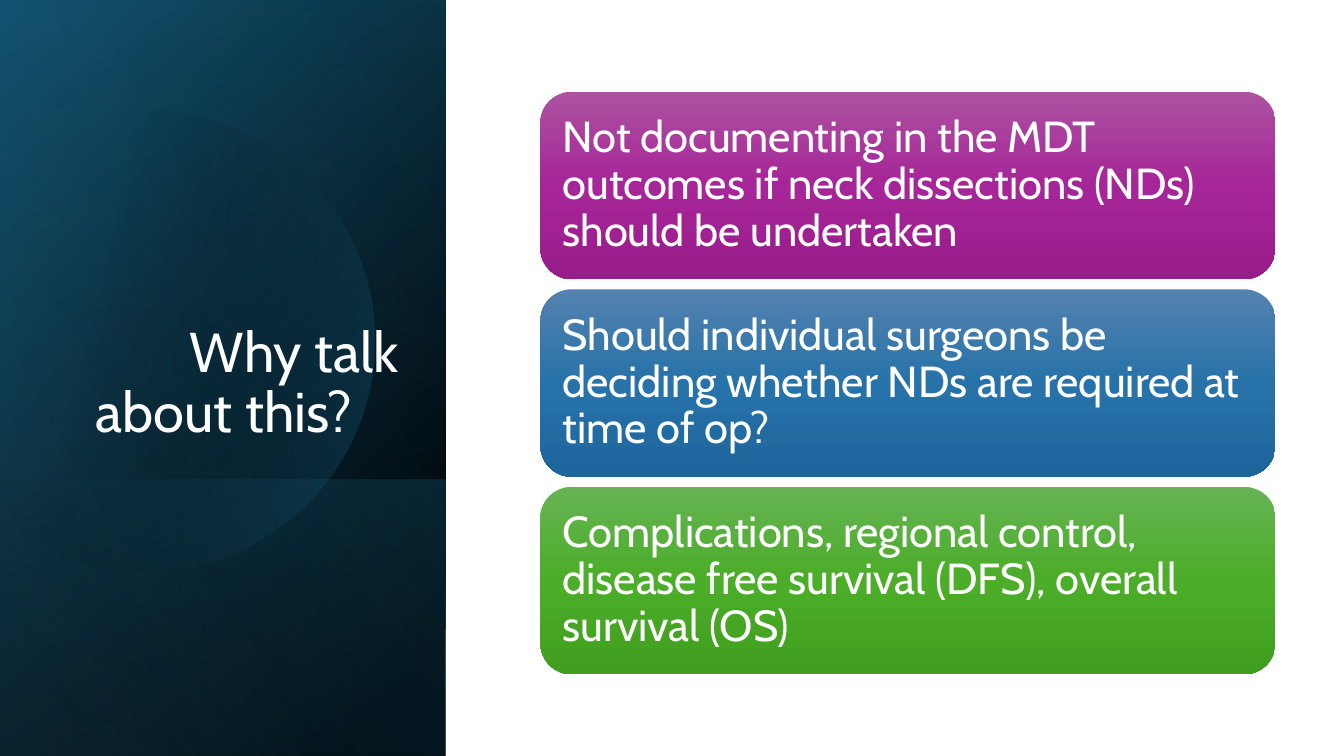
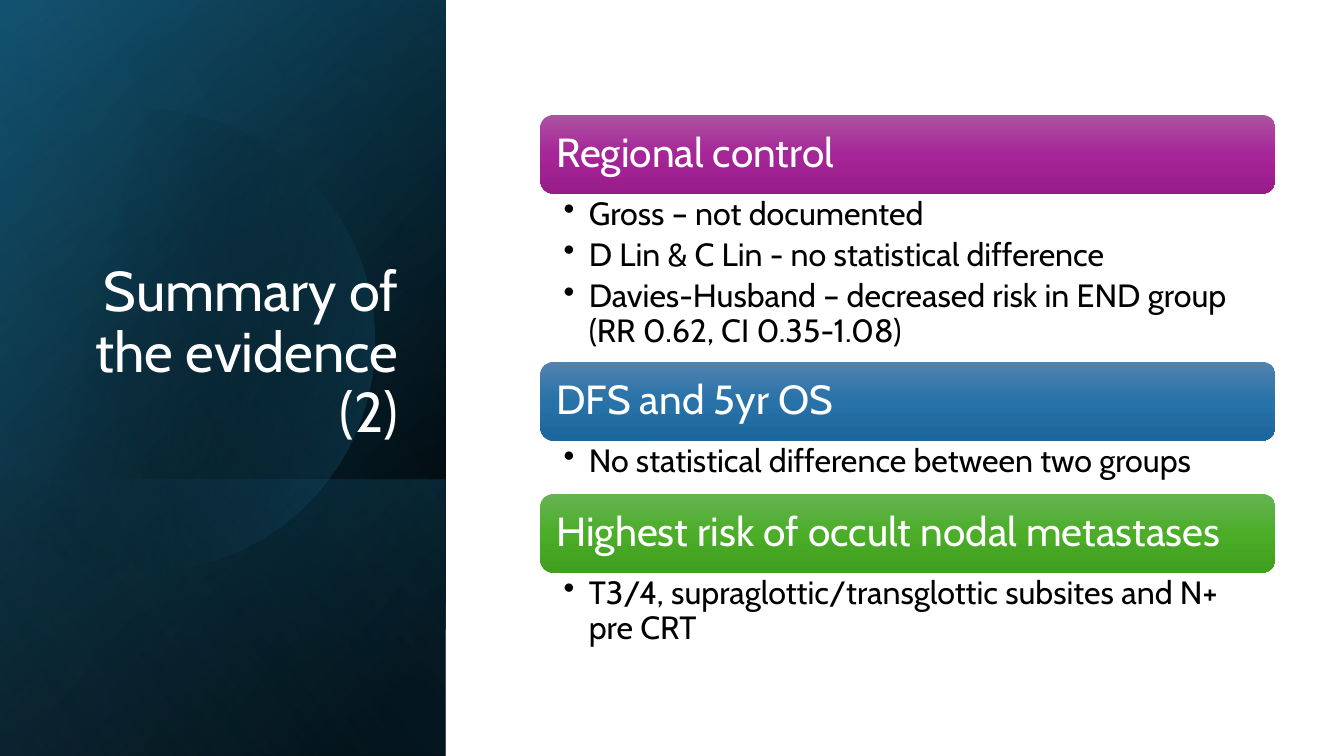
import math
from dataclasses import dataclass

from lxml import etree
from pptx import Presentation
from pptx.dml.color import RGBColor
from pptx.enum import shapes, text
from pptx.oxml import ns
from pptx.util import Inches, Pt


@dataclass(frozen=True)
class Theme:
    font: str = "Cabin"
    light: str = "FFFFFF"
    dark: str = "000000"
    navy: str = "104862"
    teal: str = "156082"
    sky: str = "46B1E1"
    title_size: int = 40
    card_size: int = 31
    header_size: int = 29
    bullet_size: int = 23
    line_spacing: float = 0.9
    accents: tuple = (
        ("AC53A0", "A62598", "991C8B"),
        ("5382AF", "2772A9", "1D669C"),
        ("66B354", "4BAD28", "409F1E"),
    )


THEME = Theme()
SLIDE_W, SLIDE_H = 13.33, 7.5
PANEL_W = 4.42
CONTENT_LEFT, CONTENT_W = 5.36, 7.29
TITLE_TOP, TITLE_RIGHT, TITLE_H = 1.84, 4.05, 2.62


def gradient_fill(shape, stops, angle):
    """Fill with (position %, colour, opacity %) stops; the angle runs clockwise."""
    shape.shadow.inherit = False
    shape.line.fill.background()
    shape.fill.gradient()
    grad = shape._element.spPr.find(ns.qn("a:gradFill"))
    for child in list(grad):
        grad.remove(child)
    grad.set("rotWithShape", "1")
    stop_list = etree.SubElement(grad, ns.qn("a:gsLst"))
    for position, colour, opacity in stops:
        stop = etree.SubElement(stop_list, ns.qn("a:gs"), pos=str(position * 1000))
        rgb = etree.SubElement(stop, ns.qn("a:srgbClr"), val=colour)
        if opacity < 100:
            etree.SubElement(rgb, ns.qn("a:alpha"), val=str(opacity * 1000))
    etree.SubElement(grad, ns.qn("a:lin"), ang=str(angle * 60000), scaled="0")


def turned_layer(slide, left, top, width, height, stops, angle):
    """Cover the given area with a mirrored rectangle turned by 90 degrees."""
    layer = slide.shapes.add_shape(
        shapes.MSO_SHAPE.RECTANGLE,
        Inches(left + (width - height) / 2), Inches(top + (height - width) / 2),
        Inches(height), Inches(width))
    layer.rotation = 90
    layer._element.spPr.find(ns.qn("a:xfrm")).set("flipH", "1")
    gradient_fill(layer, stops, angle)


def cut_disc(slide, left, center_x, center_y, radius, stops, angle):
    """Draw a disc cut off by a vertical edge at left."""
    reach = math.acos((left - center_x) / radius)
    steps = 90
    points = []
    for step in range(steps + 1):
        turn = reach * (2 * step / steps - 1)
        points.append((Inches(center_x + radius * math.cos(turn)),
                       Inches(center_y + radius * math.sin(turn))))
    outline = slide.shapes.build_freeform(*points[0])
    outline.add_line_segments(points[1:], close=True)
    gradient_fill(outline.convert_to_shape(), stops, angle)


def side_panel(slide, left, top, width, height):
    t = THEME
    whole = (left, top, width, height)
    foot_h = 2.74
    turned_layer(slide, *whole, [(8, t.dark, 100), (100, t.navy, 100)], 50)
    turned_layer(slide, *whole, [(0, t.dark, 0), (99, t.teal, 46)], 30)
    turned_layer(slide, left, top + height - foot_h, width, foot_h,
                 [(2, t.teal, 29), (100, t.dark, 30)], 130)
    cut_disc(slide, left, left + 1.42, top + 3.38, 2.29,
             [(29, t.dark, 0), (100, t.teal, 43)], 14)
    turned_layer(slide, *whole, [(0, t.dark, 0), (99, t.sky, 11)], 120)


def set_frame(frame, anchor, inset_x, inset_y):
    frame.word_wrap = True
    frame.vertical_anchor = anchor
    frame.margin_left = frame.margin_right = Inches(inset_x)
    frame.margin_top = frame.margin_bottom = Inches(inset_y)


def set_paragraph(paragraph, words, size, colour, align=text.PP_ALIGN.LEFT):
    paragraph.text = words
    paragraph.alignment = align
    paragraph.line_spacing = THEME.line_spacing
    paragraph.font.name = THEME.font
    paragraph.font.size = Pt(size)
    paragraph.font.color.rgb = RGBColor.from_string(colour)


def panel_title(slide, left, words):
    box = slide.shapes.add_textbox(
        Inches(left), Inches(TITLE_TOP), Inches(TITLE_RIGHT - left), Inches(TITLE_H))
    set_frame(box.text_frame, text.MSO_ANCHOR.BOTTOM, 0.1, 0.05)
    set_paragraph(box.text_frame.paragraphs[0], words, THEME.title_size,
                  THEME.light, text.PP_ALIGN.RIGHT)


def card(slide, left, top, width, height, words, accent, size, inset):
    shape = slide.shapes.add_shape(
        shapes.MSO_SHAPE.ROUNDED_RECTANGLE,
        Inches(left), Inches(top), Inches(width), Inches(height))
    gradient_fill(shape, [(pos, colour, 100) for pos, colour in zip((0, 50, 100), accent)], 90)
    set_frame(shape.text_frame, text.MSO_ANCHOR.MIDDLE, inset, inset)
    set_paragraph(shape.text_frame.paragraphs[0], words, size, THEME.light)


def bullet_list(slide, left, top, width, height, items):
    box = slide.shapes.add_textbox(
        Inches(left), Inches(top), Inches(width), Inches(height))
    frame = box.text_frame
    set_frame(frame, text.MSO_ANCHOR.TOP, 0.23, 0.04)
    for index, item in enumerate(items):
        paragraph = frame.add_paragraph() if index else frame.paragraphs[0]
        props = paragraph._p.get_or_add_pPr()
        props.set("marL", str(Inches(0.25)))
        props.set("indent", str(-Inches(0.25)))
        etree.SubElement(props, ns.qn("a:buChar"), char="•")
        set_paragraph(paragraph, item, THEME.bullet_size, THEME.dark)
        paragraph.space_after = Pt(4.6)


def card_stack(slide, left, top, width, messages):
    height, gap = 1.86, 0.1
    for index, (message, accent) in enumerate(zip(messages, THEME.accents)):
        card(slide, left, top + index * (height + gap), width, height,
             message, accent, THEME.card_size, 0.13)


def finding_sections(slide, left, top, width, sections):
    """Stack headers, each followed by its findings in a list of given height."""
    header_h = 0.78
    for (header, list_h, findings), accent in zip(sections, THEME.accents):
        card(slide, left, top, width, header_h, header, accent, THEME.header_size, 0.12)
        bullet_list(slide, left, top + header_h, width, list_h, findings)
        top += header_h + list_h


def panel_slide(deck, title_left, title):
    slide = deck.slides.add_slide(deck.slide_layouts[6])
    side_panel(slide, 0, 0, PANEL_W, SLIDE_H)
    panel_title(slide, title_left, title)
    return slide


def main():
    deck = Presentation()
    deck.slide_width, deck.slide_height = Inches(SLIDE_W), Inches(SLIDE_H)

    reasons = panel_slide(deck, 0.64, "Why talk about this?\t")
    card_stack(reasons, CONTENT_LEFT, 0.91, CONTENT_W, [
        "Not documenting in the MDT outcomes if neck dissections (NDs) should be undertaken",
        "Should individual surgeons be deciding whether NDs are required at time of op?",
        "Complications, regional control, disease free survival (DFS), overall survival (OS)",
    ])

    evidence = panel_slide(deck, 0.22, "Summary of the evidence (2)")
    finding_sections(evidence, CONTENT_LEFT, 1.14, CONTENT_W, [
        ("Regional control", 1.67, [
            "Gross – not documented",
            "D Lin & C Lin - no statistical difference",
            "Davies-Husband – decreased risk in END group (RR 0.62, CI 0.35-1.08)",
        ]),
        ("DFS and 5yr OS", 0.53, ["No statistical difference between two groups"]),
        ("Highest risk of occult nodal metastases", 0.79, [
            "T3/4, supraglottic/transglottic subsites and N+ pre CRT",
        ]),
    ])

    deck.save("out.pptx")


if __name__ == "__main__":
    main()
